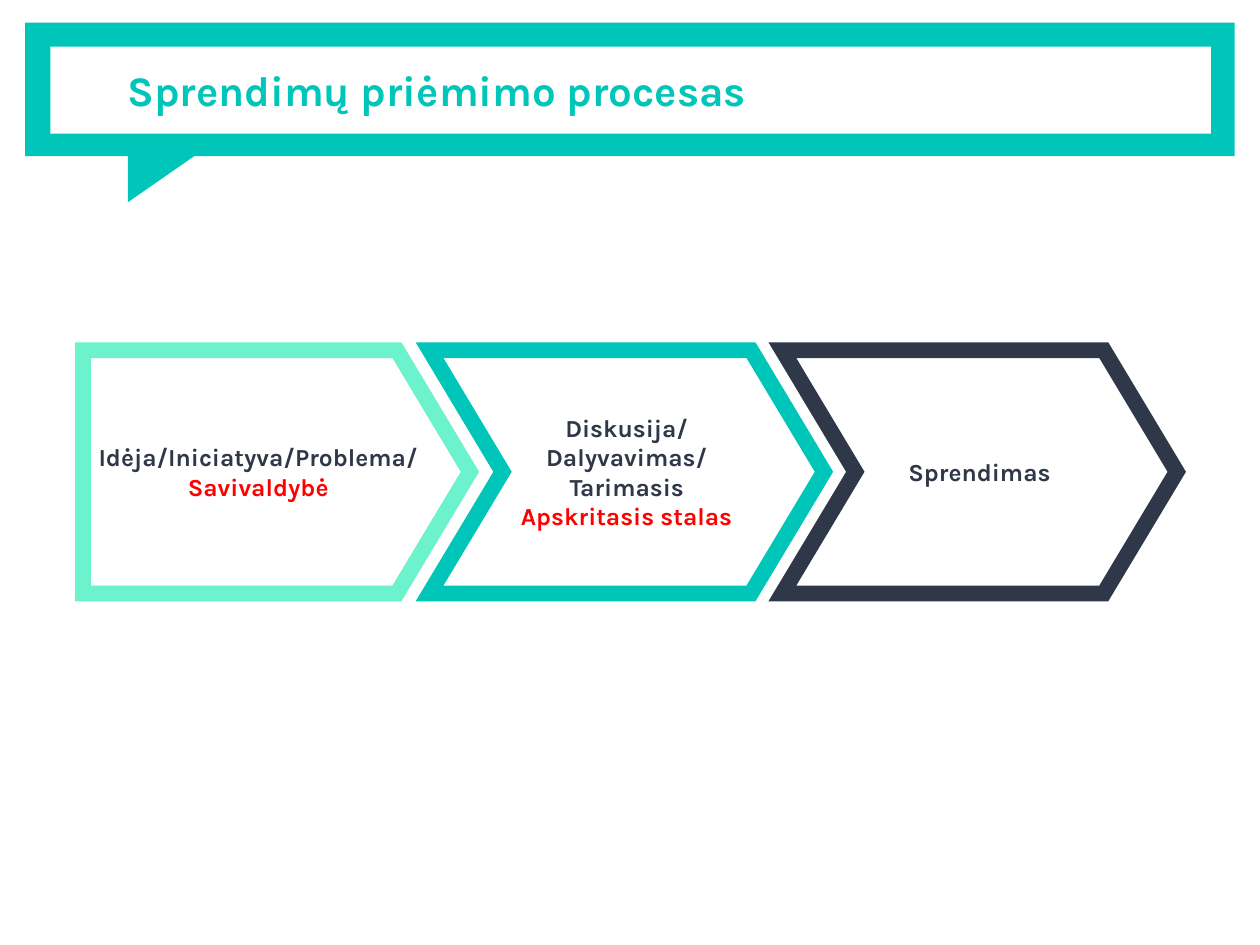
from pptx import Presentation
from pptx.dml.color import RGBColor as RGB
from pptx.enum.shapes import MSO_SHAPE as Shape
from pptx.enum.text import MSO_ANCHOR as Anchor, MSO_AUTO_SIZE as Auto, PP_ALIGN as Align
from pptx.oxml.ns import qn
from pptx.util import Inches, Pt
from lxml.etree import SubElement

TEAL = RGB(0x00, 0xC5, 0xB9)
MINT = RGB(0x6C, 0xF3, 0xCE)
NAVY = RGB(0x2F, 0x38, 0x48)
RED = RGB(0xFF, 0x00, 0x00)
WHITE = RGB(0xFF, 0xFF, 0xFF)


class Deck:
    """Holds the style and the current slide, on a grid of 0.1 inch cells."""

    font = "Karla"
    cell = 0.1

    def __init__(self, cols, rows):
        self.prs = Presentation()
        self.prs.slide_width, self.prs.slide_height = self.grid(cols, rows)
        self.slide = self.prs.slides.add_slide(self.prs.slide_layouts[5])

    def grid(self, *cells):
        return [Inches(n * self.cell) for n in cells]

    def shape(self, kind, box):
        item = self.slide.shapes.add_shape(kind, *self.grid(*box))
        item.shadow.inherit = False
        return item

    def block(self, kind, box, color, turn=0):
        item = self.shape(kind, box)
        item.fill.solid()
        item.fill.fore_color.rgb = color
        item.line.fill.background()
        item.rotation = turn

    def label(self, item, lines, size, align):
        frame = item.text_frame
        frame.text = "\n".join(text for text, _ in lines)
        frame.word_wrap = True
        frame.auto_size = Auto.NONE
        frame.vertical_anchor = Anchor.MIDDLE
        frame.margin_left = frame.margin_right = Inches(0.1)
        frame.margin_top = frame.margin_bottom = Inches(0.1)
        for para, (_, color) in zip(frame.paragraphs, lines):
            para.alignment = align
            font = para.runs[0].font
            font.name, font.size, font.bold = self.font, Pt(size), True
            font.color.rgb = color

    def step(self, kind, box, bend, color, lines):
        item = self.shape(kind, box)
        item.adjustments[0] = bend
        item.fill.background()
        item.line.color.rgb = color
        item.line.width = Pt(9)
        edge = item.line.fill._xPr
        SubElement(edge, qn("a:miter"), lim="800000")
        self.label(item, lines, 14, Align.CENTER)

    def title(self, text, box, color):
        item = self.slide.shapes.title
        item.left, item.top, item.width, item.height = self.grid(*box)
        self.label(item, [(text, color)], 24, Align.LEFT)
        self.slide.shapes.element.append(item.element)


def main():
    deck = Deck(100, 75)
    deck.block(Shape.RECTANGLE, (2, 1.8, 96, 10.6), TEAL)
    deck.block(Shape.RIGHT_TRIANGLE, (11.2, 10.2, 4.8, 6.9), TEAL, 90)
    deck.block(Shape.RECTANGLE, (4, 3.7, 92.1, 6.9), WHITE)

    top, high, wide, pitch = 27.8, 19.3, 31.3, 28
    deck.step(Shape.PENTAGON, (6.6, top, 30.7, high), 0.3, MINT,
              [("Idėja/Iniciatyva/Problema/", NAVY), ("Savivaldybė", RED)])
    chain = [
        (TEAL, [("Diskusija/Dalyvavimas/Tarimasis", NAVY), ("Apskritasis stalas", RED)]),
        (NAVY, [("Sprendimas", NAVY)]),
    ]
    for i, (color, lines) in enumerate(chain):
        box = (34.1 + i * pitch, top, wide, high)
        deck.step(Shape.CHEVRON, box, 0.3, color, lines)

    deck.title("Sprendimų priėmimo procesas", (9.1, 1.8, 87, 10.6), TEAL)
    deck.prs.save("out.pptx")


if __name__ == "__main__":
    main()
